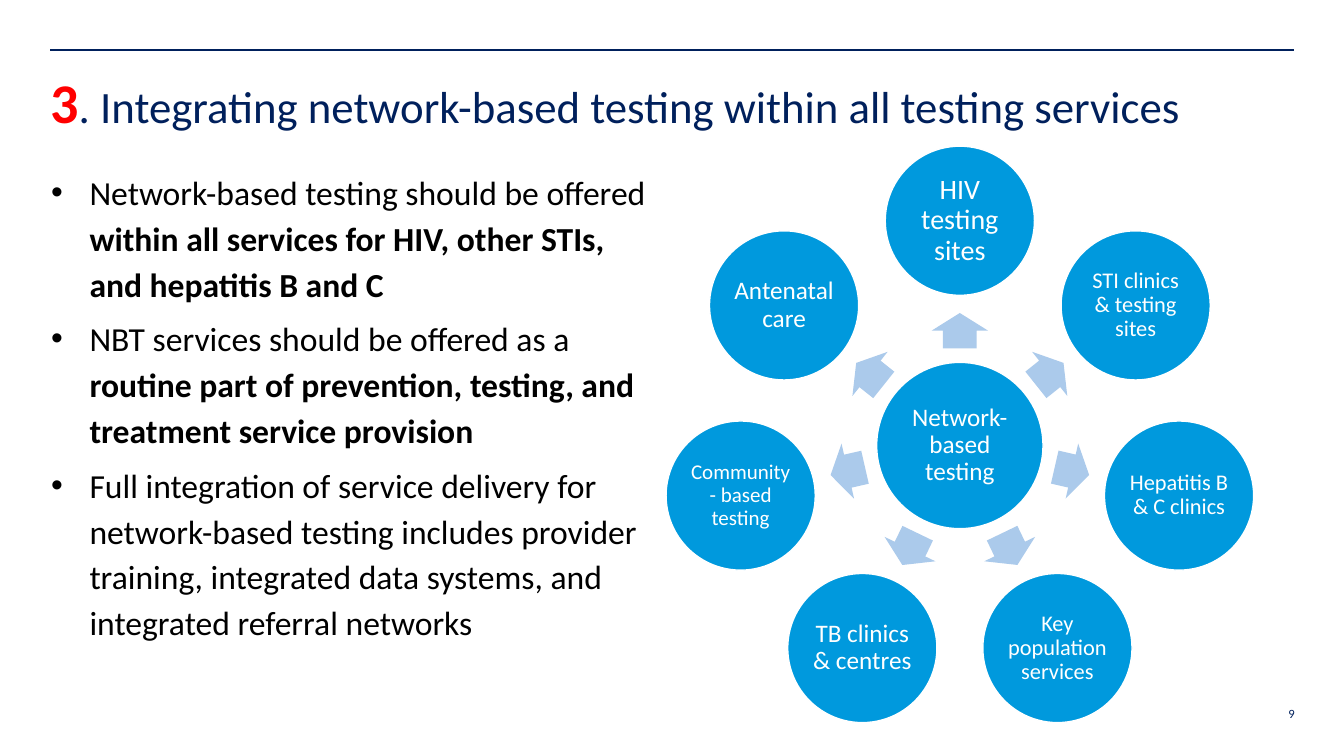
import math
from dataclasses import dataclass

import pptx
import pptx.dml.color
import pptx.enum.shapes
import pptx.enum.text
import pptx.oxml
import pptx.util
from lxml import etree
from pptx.util import Inches


@dataclass(frozen=True)
class Theme:
    font: str = "Calibri"
    navy: str = "00205C"
    red: str = "FF0000"
    black: str = "000000"
    white: str = "FFFFFF"
    blue: str = "0099DD"
    pale_blue: str = "ABCAEB"
    number_size: int = 40
    title_size: int = 32
    body_size: int = 24
    page_size: int = 9
    hub_size: int = 18


theme = Theme()
color = pptx.dml.color.RGBColor.from_string
align = pptx.enum.text.PP_ALIGN
preset = pptx.enum.shapes.MSO_SHAPE


def add_text(paragraph, text, *, size, fill, bold=False):
    run = paragraph.add_run()
    run.text = text
    run.font.name = theme.font
    run.font.size = pptx.util.Pt(size)
    run.font.bold = bold
    run.font.color.rgb = color(fill)


def prepare_frame(shape, horizontal, vertical):
    frame = shape.text_frame
    frame.word_wrap = True
    frame.margin_left = frame.margin_right = Inches(horizontal)
    frame.margin_top = frame.margin_bottom = Inches(vertical)
    return frame


presentation = pptx.Presentation()
presentation.slide_width = Inches(13.33)
presentation.slide_height = Inches(7.5)
slide = presentation.slides.add_slide(presentation.slide_layouts[6])

rule = slide.shapes.add_connector(
    pptx.enum.shapes.MSO_CONNECTOR.STRAIGHT,
    Inches(0.5), Inches(0.5), Inches(12.83), Inches(0.5),
)
rule.line.color.rgb = color(theme.navy)
rule.line.width = pptx.util.Pt(1.5)
etree.SubElement(rule.element.spPr, pptx.oxml.ns.qn("a:effectLst"))

title = slide.shapes.add_textbox(Inches(0.5), Inches(0.75), Inches(12.33), Inches(1.1))
paragraph = prepare_frame(title, 0, 0).paragraphs[0]
paragraph.line_spacing = 0.9
add_text(paragraph, "3", size=theme.number_size, fill=theme.red, bold=True)
add_text(
    paragraph, ". Integrating network-based testing within all testing services",
    size=theme.title_size, fill=theme.navy,
)

page = slide.shapes.add_textbox(Inches(12.42), Inches(7), Inches(0.42), Inches(0.35))
paragraph = prepare_frame(page, 0, 0).paragraphs[0]
paragraph.alignment = align.RIGHT
add_text(paragraph, "9", size=theme.page_size, fill=theme.navy)

hub_x, hub_y = 9.52, 4.42
hub_diameter, service_diameter = 1.65, 1.48
service_radius, arrow_radius = 2.23, 1.14
arrow_length, arrow_width = 0.35, 0.56

services = [
    ("HIV testing sites", 20),
    ("STI clinics & testing sites", 16),
    ("Hepatitis B & C clinics", 16),
    ("Key population services", 16),
    ("TB clinics & centres", 18),
    ("Community - based testing", 15),
    ("Antenatal care", 18),
]
circles = [("Network-based testing", theme.hub_size, hub_x, hub_y, hub_diameter)]

for index, (label, size) in enumerate(services):
    degrees = index * 360 / len(services) - 90
    across, down = math.cos(math.radians(degrees)), math.sin(math.radians(degrees))
    circles.append((
        label, size, hub_x + service_radius * across,
        hub_y + service_radius * down, service_diameter,
    ))
    arrow = slide.shapes.add_shape(
        preset.RIGHT_ARROW,
        Inches(hub_x + arrow_radius * across - arrow_length / 2),
        Inches(hub_y + arrow_radius * down - arrow_width / 2),
        Inches(arrow_length), Inches(arrow_width),
    )
    arrow.adjustments[0] = 0.6
    arrow.adjustments[1] = 0.5
    arrow.rotation = degrees % 360
    arrow.shadow.inherit = False
    arrow.fill.solid()
    arrow.fill.fore_color.rgb = color(theme.pale_blue)
    arrow.line.fill.background()

for label, size, center_x, center_y, diameter in circles:
    circle = slide.shapes.add_shape(
        preset.OVAL, Inches(center_x - diameter / 2), Inches(center_y - diameter / 2),
        Inches(diameter), Inches(diameter),
    )
    circle.shadow.inherit = False
    circle.fill.solid()
    circle.fill.fore_color.rgb = color(theme.blue)
    circle.line.color.rgb = color(theme.white)
    circle.line.width = pptx.util.Pt(1)
    frame = prepare_frame(circle, 0.02, 0.02)
    frame.vertical_anchor = pptx.enum.text.MSO_ANCHOR.MIDDLE
    paragraph = frame.paragraphs[0]
    paragraph.alignment = align.CENTER
    paragraph.line_spacing = 0.9
    add_text(paragraph, label, size=size, fill=theme.white)

bullets = [
    ("Network-based testing should be offered ",
     "within all services for HIV, other STIs, and hepatitis B and C"),
    ("NBT services should be offered as a ",
     "routine part of prevention, testing, and treatment service provision"),
    ("Full integration of service delivery for network-based testing includes provider "
     "training, integrated data systems, and integrated referral networks", ""),
]
body = slide.shapes.add_textbox(Inches(0.41), Inches(1.6), Inches(6.1), Inches(5.32))
frame = prepare_frame(body, 0.1, 0.05)
for index, (plain, strong) in enumerate(bullets):
    paragraph = frame.add_paragraph() if index else frame.paragraphs[0]
    paragraph.line_spacing = 1.14
    paragraph.space_before = pptx.util.Pt(3 if index else 0)
    paragraph.space_after = pptx.util.Pt(3)
    properties = paragraph._p.get_or_add_pPr()
    properties.set("marL", str(Inches(0.38)))
    properties.set("indent", str(-Inches(0.38)))
    bullet_font = etree.SubElement(properties, pptx.oxml.ns.qn("a:buFont"))
    bullet_font.set("typeface", "Arial")
    bullet = etree.SubElement(properties, pptx.oxml.ns.qn("a:buChar"))
    bullet.set("char", "•")
    add_text(paragraph, plain, size=theme.body_size, fill=theme.black)
    if strong:
        add_text(paragraph, strong, size=theme.body_size, fill=theme.black, bold=True)

presentation.save("out.pptx")
